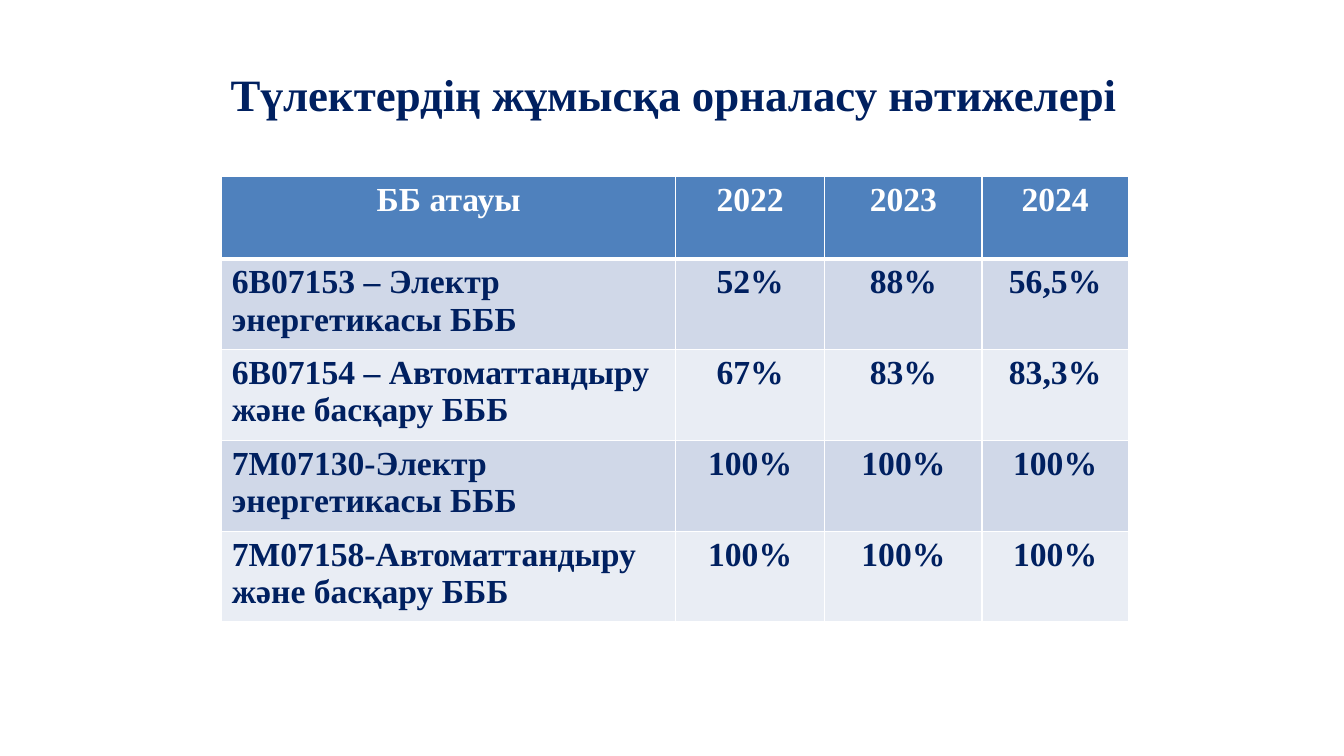
from lxml.etree import SubElement
from pptx import Presentation
from pptx.dml.color import RGBColor
from pptx.enum.text import MSO_ANCHOR, PP_ALIGN
from pptx.oxml.ns import qn
from pptx.util import Inches, Pt

TITLE = "Түлектердің жұмысқа орналасу нәтижелері"
ROWS = [
    ("ББ атауы", "2022", "2023", "2024"),
    ("6В07153 – Электр энергетикасы БББ", "52%", "88%", "56,5%"),
    ("6В07154 – Автоматтандыру және басқару БББ", "67%", "83%", "83,3%"),
    ("7М07130-Электр энергетикасы БББ", "100%", "100%", "100%"),
    ("7М07158-Автоматтандыру және басқару БББ", "100%", "100%", "100%"),
]
COLUMN_WIDTHS = [4.5, 1.48, 1.56, 1.45]
HEADER_HEIGHT, BODY_HEIGHT = 0.82, 0.84

FONT = "Times New Roman"
NAVY = RGBColor(0x00, 0x20, 0x60)
WHITE = RGBColor(0xFF, 0xFF, 0xFF)
HEADER_BLUE = RGBColor(0x4F, 0x81, 0xBD)
BANDS = [RGBColor(0xE9, 0xED, 0xF4), RGBColor(0xD0, 0xD8, 0xE8)]


def write(frame, text, *, size, color, align=PP_ALIGN.CENTER, anchor=MSO_ANCHOR.TOP):
    frame.word_wrap = True
    frame.vertical_anchor = anchor
    paragraph = frame.paragraphs[0]
    paragraph.alignment = align
    run = paragraph.add_run()
    run.text = text
    run.font.name = FONT
    run.font.size = Pt(size)
    run.font.bold = True
    run.font.color.rgb = color


def set_borders(cell, widths):
    """Draw white borders; widths maps the sides L, R, T, B to points."""
    properties = cell._tc.get_or_add_tcPr()
    for side, width in widths.items():
        line = SubElement(properties, qn(f"a:ln{side}"), w=str(Pt(width)))
        fill = SubElement(line, qn("a:solidFill"))
        SubElement(fill, qn("a:srgbClr"), val=str(WHITE))


def add_title(slide):
    title = slide.shapes.add_textbox(Inches(2.17), Inches(0.3), Inches(9.03), Inches(1.25))
    write(title.text_frame, TITLE, size=32, color=NAVY, anchor=MSO_ANCHOR.MIDDLE)


def add_results_table(slide):
    heights = [HEADER_HEIGHT] + [BODY_HEIGHT] * (len(ROWS) - 1)
    table = slide.shapes.add_table(
        len(ROWS), len(COLUMN_WIDTHS), Inches(2.2), Inches(1.75),
        Inches(sum(COLUMN_WIDTHS)), Inches(sum(heights))).table
    for column, width in zip(table.columns, COLUMN_WIDTHS):
        column.width = Inches(width)
    for r, (values, height) in enumerate(zip(ROWS, heights)):
        table.rows[r].height = Inches(height)
        header = r == 0
        for c, value in enumerate(values):
            cell = table.cell(r, c)
            set_borders(cell, {"L": 1, "R": 1, "T": 3 if r == 1 else 1, "B": 3 if header else 1})
            cell.fill.solid()
            cell.fill.fore_color.rgb = HEADER_BLUE if header else BANDS[r % 2]
            is_name = c == 0 and not header
            write(cell.text_frame, value, size=24, color=WHITE if header else NAVY,
                  align=PP_ALIGN.LEFT if is_name else PP_ALIGN.CENTER)


def main():
    presentation = Presentation()
    presentation.slide_width = Inches(13.33)
    presentation.slide_height = Inches(7.5)
    slide = presentation.slides.add_slide(presentation.slide_layouts[6])
    add_title(slide)
    add_results_table(slide)
    presentation.save("out.pptx")


if __name__ == "__main__":
    main()
